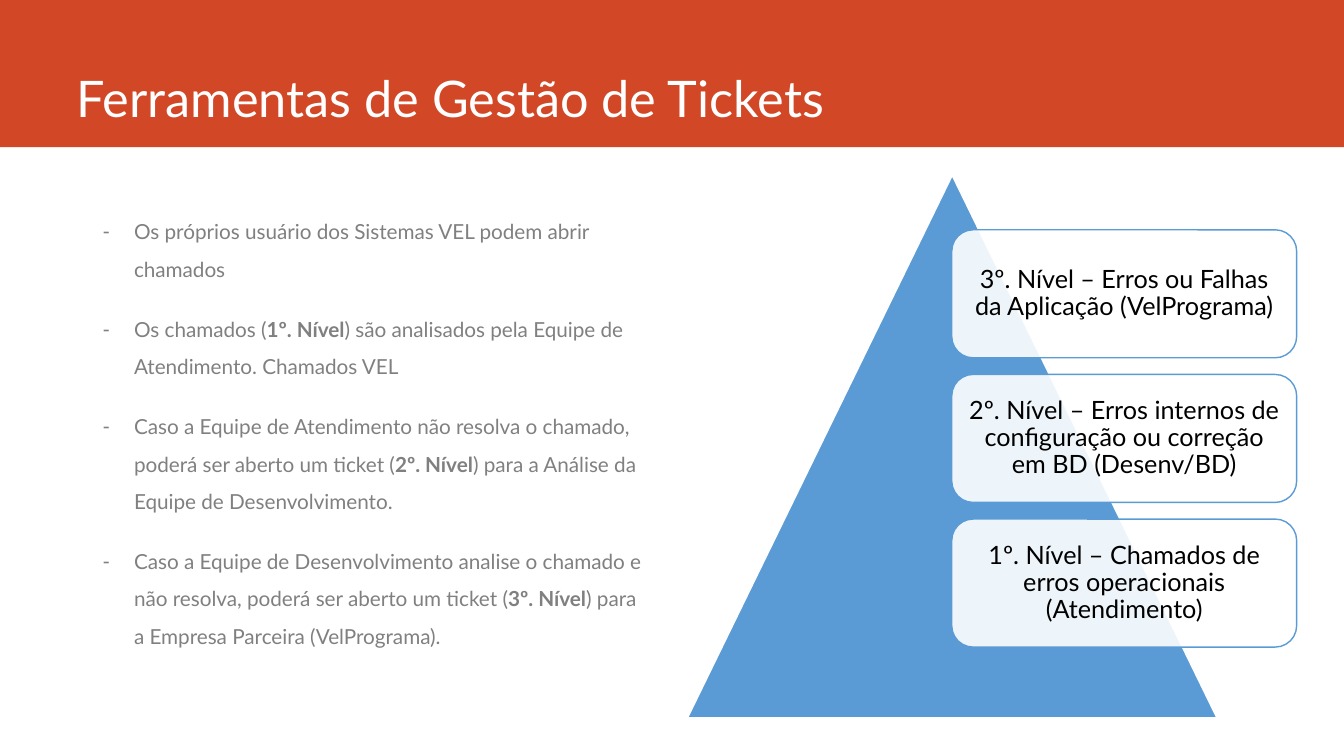
"""Build the slide on ticket management tools and the three support levels."""
from lxml.etree import SubElement
from pptx import Presentation
from pptx.dml.color import RGBColor
from pptx.enum.shapes import MSO_SHAPE as Preset
from pptx.enum.text import MSO_ANCHOR as Anchor, MSO_AUTO_SIZE as AutoSize, PP_ALIGN as Align
from pptx.oxml.ns import qn
from pptx.util import Inches, Pt

ORANGE = RGBColor(0xD2, 0x47, 0x26)
BLUE = RGBColor(0x5B, 0x9B, 0xD5)
GRAY = RGBColor(0x80, 0x80, 0x80)
WHITE = RGBColor(0xFF, 0xFF, 0xFF)
BLACK = RGBColor(0x00, 0x00, 0x00)

STEPS = [
    [("Os próprios usuário dos Sistemas VEL podem abrir chamados", False)],
    [("Os chamados (", False), ("1º. Nível", True),
     (") são analisados pela Equipe de Atendimento. Chamados VEL", False)],
    [("Caso a Equipe de Atendimento não resolva o chamado, poderá ser aberto um ticket (", False),
     ("2º. Nível", True), (") para a Análise da Equipe de Desenvolvimento.", False)],
    [("Caso a Equipe de Desenvolvimento analise o chamado e não resolva, "
      "poderá ser aberto um ticket (", False),
     ("3º. Nível", True), (") para a Empresa Parceira (VelPrograma).", False)],
]
LEVELS = [
    "3º. Nível – Erros ou Falhas da Aplicação (VelPrograma)",
    "2º. Nível – Erros internos de configuração ou correção em BD (Desenv/BD)",
    "1º. Nível – Chamados de erros operacionais (Atendimento)",
]
LEVEL_TOP, LEVEL_PITCH = 30.4, 19.13

deck = Presentation()
deck.slide_width, deck.slide_height = Inches(13.33), Inches(7.5)
slide = deck.slides.add_slide(deck.slide_layouts[1])
title, steps = slide.placeholders


def area(left, top, width, height):
    """Turn percentages of the slide into left, top, width and height."""
    across, down = deck.slide_width / 100, deck.slide_height / 100
    return int(left * across), int(top * down), int(width * across), int(height * down)


def add_run(paragraph, text, size, color, bold=False):
    """Append one formatted run."""
    run = paragraph.add_run()
    run.text = text
    run.font.name, run.font.size, run.font.bold = "Lato", Pt(size), bold
    run.font.color.rgb = color


banner = slide.shapes.add_shape(Preset.RECTANGLE, *area(0, 0, 100, 19.47))
banner.shadow.inherit = False
banner.fill.solid()
banner.fill.fore_color.rgb = ORANGE
banner.line.fill.background()
title.element.addprevious(banner.element)

title.left, title.top, title.width, title.height = area(4.95, 0, 88.2, 17.6)
title.text_frame.auto_size = AutoSize.NONE
title.text_frame.vertical_anchor = Anchor.BOTTOM
heading = title.text_frame.paragraphs[0]
heading.alignment = Align.LEFT
add_run(heading, "Ferramentas de Gestão de Tickets", 36, WHITE)

steps.left, steps.top, steps.width, steps.height = area(6.9, 26.67, 41.63, 63.47)
steps.text_frame.auto_size = AutoSize.NONE
for index, parts in enumerate(STEPS):
    step = steps.text_frame.add_paragraph() if index else steps.text_frame.paragraphs[0]
    step.line_spacing, step.space_before, step.space_after = 1.5, Pt(4.4), Pt(12)
    indents = step._p.get_or_add_pPr()
    indents.set("marL", str(Inches(0.31)))
    indents.set("indent", str(-Inches(0.31)))
    SubElement(indents, qn("a:buChar")).set("char", "-")
    for text, bold in parts:
        add_run(step, text, 14.8, GRAY, bold)

pyramid = slide.shapes.add_shape(Preset.ISOSCELES_TRIANGLE, *area(51.16, 23.2, 39.38, 71.73))
pyramid.shadow.inherit = False
pyramid.fill.solid()
pyramid.fill.fore_color.rgb = BLUE
pyramid.line.color.rgb = WHITE
pyramid.line.width = Pt(1)

for row, text in enumerate(LEVELS):
    level = slide.shapes.add_shape(
        Preset.ROUNDED_RECTANGLE, *area(70.82, LEVEL_TOP + row * LEVEL_PITCH, 25.66, 16.93))
    level.shadow.inherit = False
    level.fill.solid()
    level.fill.fore_color.rgb = WHITE
    tint = level.element.spPr.find(qn("a:solidFill"))[0]
    SubElement(tint, qn("a:alpha")).set("val", "90000")
    level.line.color.rgb = BLUE
    level.line.width = Pt(1)
    frame = level.text_frame
    frame.word_wrap = True
    frame.vertical_anchor = Anchor.MIDDLE
    frame.margin_left = frame.margin_right = Inches(0.07)
    frame.margin_top = frame.margin_bottom = Inches(0.07)
    label = frame.paragraphs[0]
    label.alignment = Align.CENTER
    label.line_spacing, label.space_after = 0.9, Pt(6.3)
    add_run(label, text, 18, BLACK)

deck.save("out.pptx")
